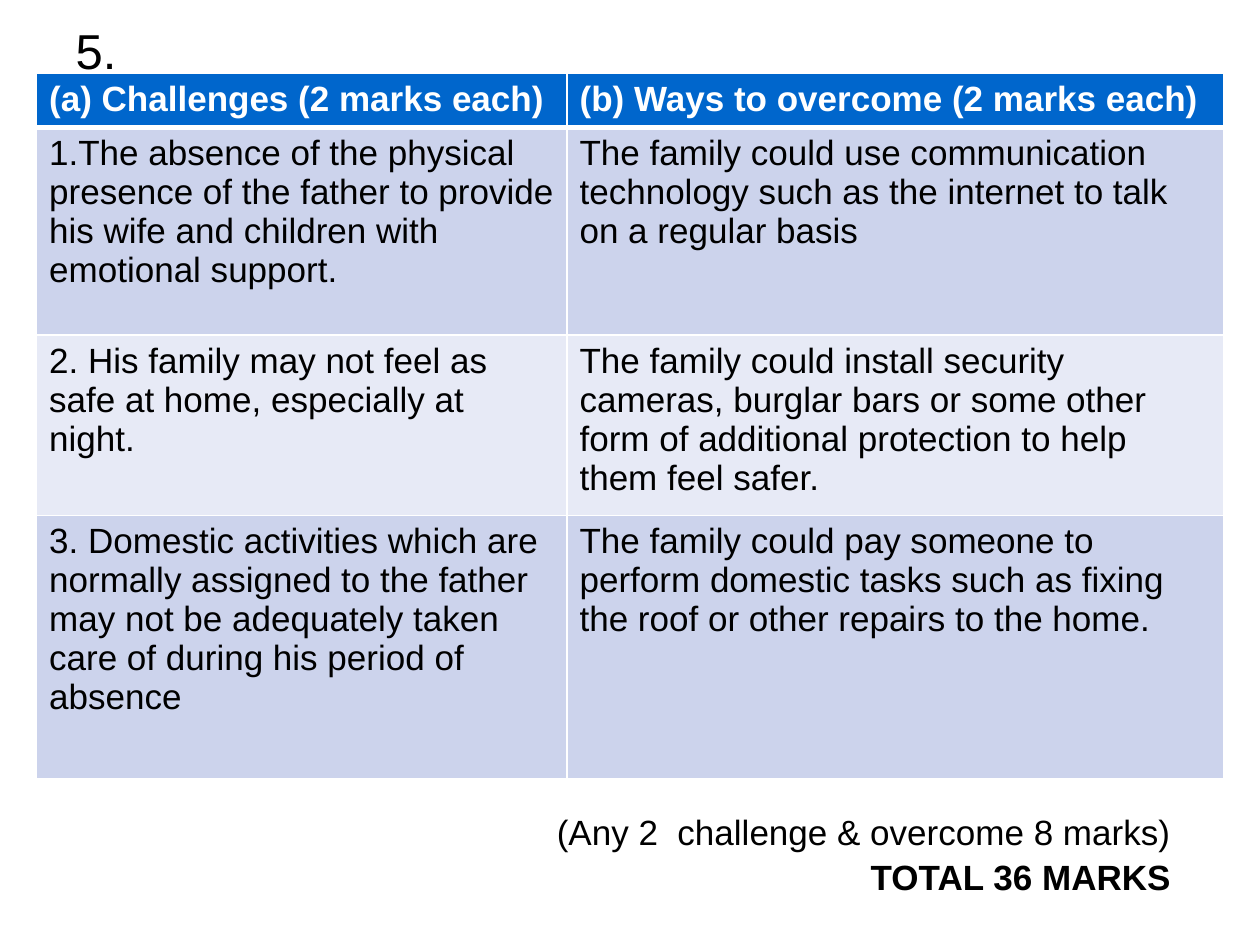
from pptx import Presentation
from pptx.dml.color import RGBColor
from pptx.enum.text import MSO_ANCHOR as Anchor, PP_ALIGN as Align
from pptx.oxml import parse_xml
from pptx.oxml.ns import nsdecls
from pptx.util import Inches, Pt

BLACK = RGBColor(0x00, 0x00, 0x00)
WHITE = RGBColor(0xFF, 0xFF, 0xFF)
HEADER_BLUE = RGBColor(0x00, 0x66, 0xCC)
BAND_DARK = RGBColor(0xCC, 0xD3, 0xEC)
BAND_LIGHT = RGBColor(0xE7, 0xEA, 0xF6)

COLUMN_WIDTHS = [4.21, 5.21]
ROW_HEIGHTS = [0.43, 1.65, 1.43, 2.09]
ANSWERS = [
    ("(a) Challenges (2 marks each)", "(b) Ways to overcome (2 marks each)"),
    ("1.The absence of the physical presence of the father to provide his wife "
     "and children with emotional support.",
     "The family could use communication technology such as the internet to talk "
     "on a regular basis"),
    ("2. His family may not feel as safe at home, especially at night.",
     "The family could install security cameras, burglar bars or some other form "
     "of additional protection to help them feel safer."),
    ("3. Domestic activities which are normally assigned to the father may not be "
     "adequately taken care of during his period of absence",
     "The family could pay someone to perform domestic tasks such as fixing the "
     "roof or other repairs to the home."),
]


def write(para, text, size=20, color=BLACK, bold=False, align=Align.LEFT, before=0):
    para.alignment = align
    if before:
        para.space_before = Pt(before)
    span = para.add_run()
    span.text = text
    span.font.name = "Arial"
    span.font.size = Pt(size)
    span.font.bold = bold
    span.font.color.rgb = color


def set_borders(cell, **widths):
    properties = cell._tc.get_or_add_tcPr()
    for index, (side, width) in enumerate(widths.items()):
        properties.insert(index, parse_xml(
            f'<a:ln{side} {nsdecls("a")} w="{Pt(width)}"><a:solidFill>'
            f'<a:srgbClr val="{WHITE}"/></a:solidFill></a:ln{side}>'))


def place_title(page, left, top, width, height):
    title = page.shapes.title
    title.left, title.top, title.width, title.height = left, top, width, height
    title.text_frame.vertical_anchor = Anchor.MIDDLE
    write(title.text_frame.paragraphs[0], "5.", size=28)


def place_answers(page, left, top, width, height):
    table = page.shapes.add_table(
        len(ANSWERS), len(COLUMN_WIDTHS), left, top, width, height).table
    for column, column_width in zip(table.columns, COLUMN_WIDTHS):
        column.width = Inches(column_width)
    for row, row_height in zip(table.rows, ROW_HEIGHTS):
        row.height = Inches(row_height)
    for row_index, texts in enumerate(ANSWERS):
        header = row_index == 0
        band = BAND_DARK if row_index % 2 else BAND_LIGHT
        for column_index, text in enumerate(texts):
            cell = table.cell(row_index, column_index)
            cell.fill.solid()
            cell.fill.fore_color.rgb = HEADER_BLUE if header else band
            set_borders(cell, L=1, R=1, T=3 if row_index == 1 else 1,
                        B=3 if header else 1)
            write(cell.text_frame.paragraphs[0], text,
                  color=WHITE if header else BLACK, bold=header)


def place_total(page, left, top, width, height):
    frame = page.shapes.add_textbox(left, top, width, height).text_frame
    frame.word_wrap = True
    frame.vertical_anchor = Anchor.TOP
    frame.margin_top = Inches(0.01)
    write(frame.paragraphs[0], "(Any 2  challenge & overcome 8 marks)",
          align=Align.RIGHT)
    write(frame.add_paragraph(), "TOTAL 36 MARKS", bold=True,
          align=Align.RIGHT, before=2)


def main():
    deck = Presentation()
    deck.slide_width, deck.slide_height = Inches(10), Inches(7.5)
    page = deck.slides.add_slide(deck.slide_layouts[5])
    page.background.fill.solid()
    page.background.fill.fore_color.rgb = WHITE
    place_title(page, Inches(0.5), Inches(0.21), Inches(9), Inches(0.38))
    place_answers(page, Inches(0.29), Inches(0.58),
                  Inches(sum(COLUMN_WIDTHS)), Inches(sum(ROW_HEIGHTS)))
    place_total(page, Inches(0.39), Inches(6.42), Inches(9), Inches(0.99))
    deck.save("out.pptx")


if __name__ == "__main__":
    main()
